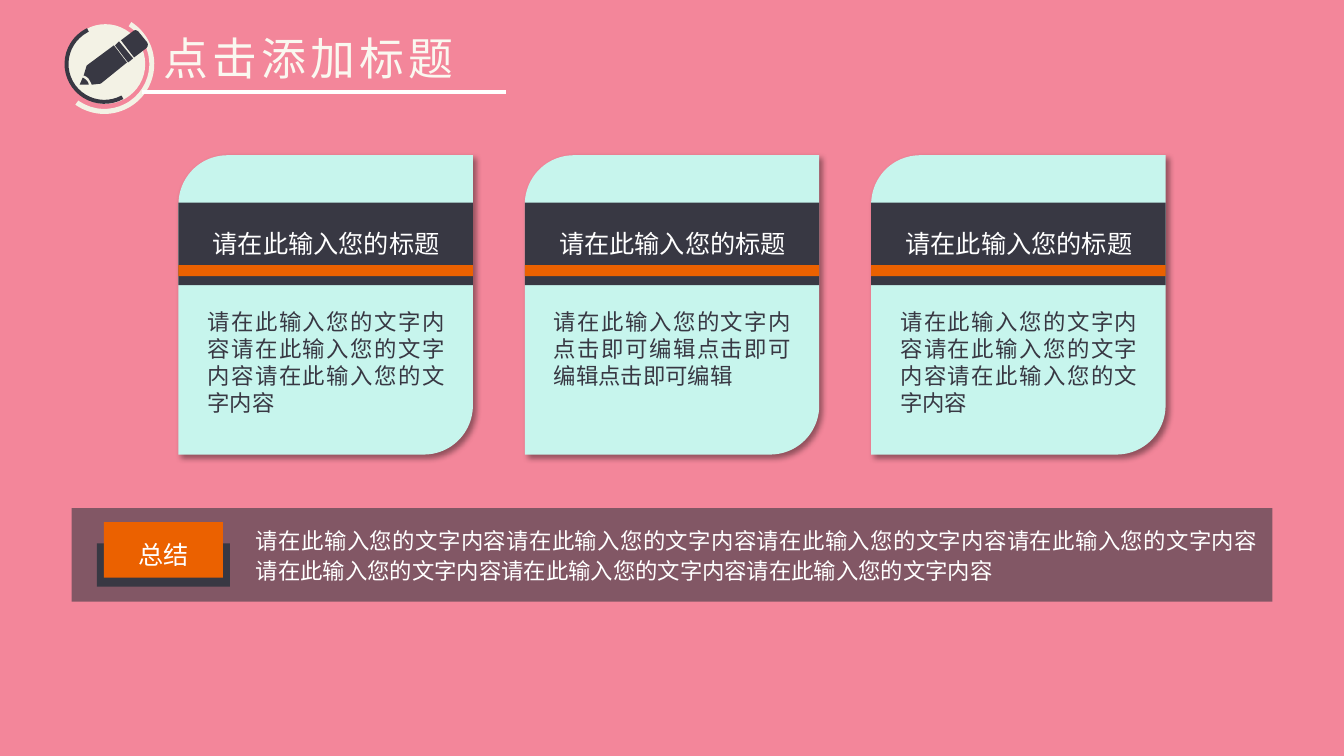
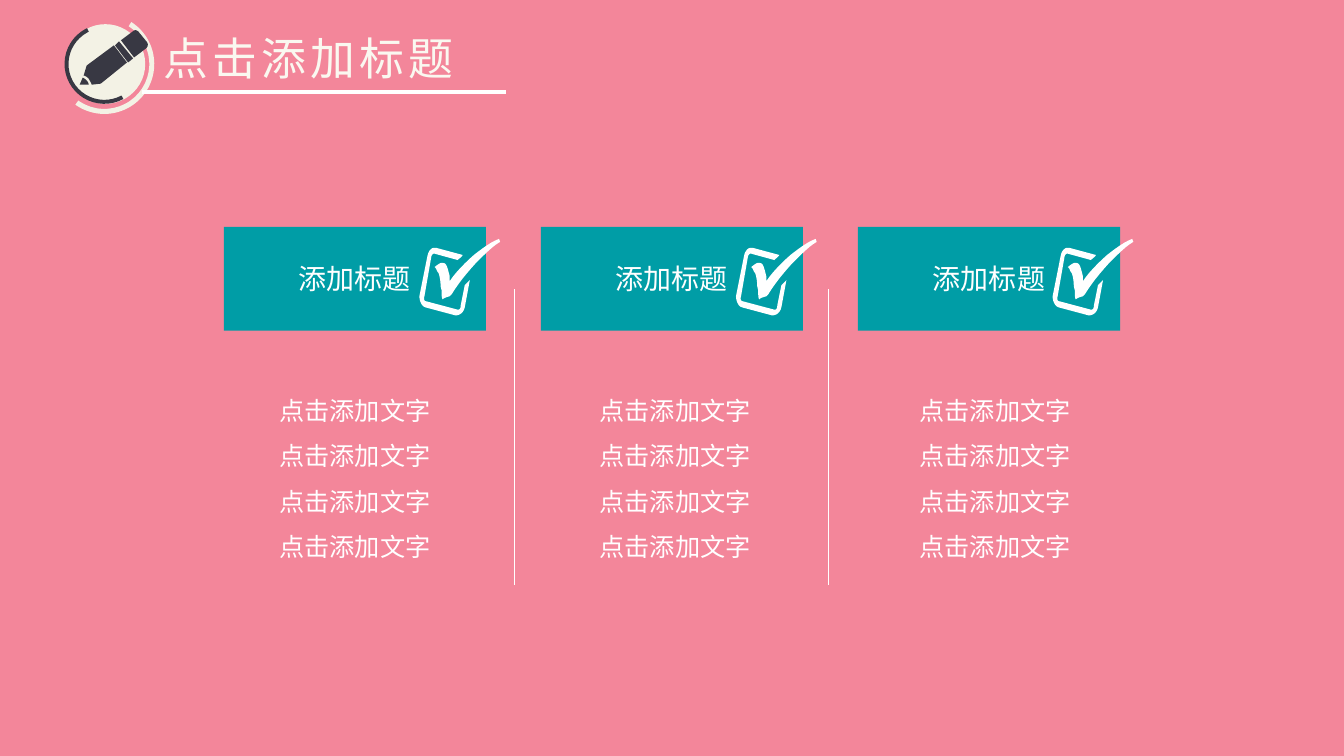
from lxml.etree import SubElement
from pptx import Presentation
from pptx.dml.color import RGBColor
from pptx.enum.shapes import MSO_CONNECTOR, MSO_SHAPE as SHAPE
from pptx.enum.text import MSO_ANCHOR as ANCHOR, MSO_AUTO_SIZE as AUTO, PP_ALIGN as ALIGN
from pptx.oxml.ns import qn
from pptx.util import Inches, Pt

PINK = RGBColor(0xF3, 0x86, 0x9A)
MINT = RGBColor(0xC7, 0xF5, 0xED)
DARK = RGBColor(0x38, 0x38, 0x43)
ORANGE = RGBColor(0xEB, 0x61, 0x00)
TEAL = RGBColor(0x00, 0x9D, 0xA6)
CREAM = RGBColor(0xF3, 0xF2, 0xE5)
IVORY = RGBColor(0xFA, 0xF8, 0xF0)
WHITE = RGBColor(0xFF, 0xFF, 0xFF)
FONT = "Noto Sans CJK SC"

# Outlines in inches: a pair is a straight step, six numbers are a cubic curve.
PENCIL = [
    [(1.35, 0.3), (1.34, 0.3, 1.33, 0.3, 1.32, 0.31), (1.2, 0.4), (1.33, 0.57),
     (1.45, 0.48), (1.47, 0.46, 1.47, 0.44, 1.46, 0.42), (1.37, 0.31)],
    [(1.18, 0.41), (1.14, 0.45), (1.27, 0.62), (1.32, 0.58)],
    [(1.13, 0.45), (0.86, 0.65), (0.83, 0.75), (0.85, 0.75, 0.87, 0.77, 0.88, 0.78),
     (0.89, 0.8, 0.9, 0.81, 0.91, 0.84), (1, 0.83), (1.26, 0.62)],
    [(0.82, 0.77), (0.79, 0.84), (0.88, 0.84), (0.88, 0.83, 0.87, 0.81, 0.86, 0.8),
     (0.85, 0.79, 0.84, 0.78, 0.82, 0.77)],
]
CHECKBOX = [
    [(4.95, 2.37), (4.87, 2.4, 4.79, 2.46, 4.7, 2.53), (4.61, 2.61, 4.52, 2.7, 4.46, 2.79),
     (4.46, 2.74), (4.44, 2.66, 4.43, 2.61, 4.4, 2.61), (4.37, 2.6, 4.35, 2.62, 4.31, 2.65),
     (4.33, 2.66, 4.33, 2.69, 4.35, 2.71), (4.36, 2.74, 4.37, 2.78, 4.37, 2.84),
     (4.38, 2.88), (4.38, 2.92, 4.38, 2.96, 4.39, 2.97), (4.4, 2.96, 4.42, 2.95, 4.46, 2.94),
     (4.48, 2.92), (4.54, 2.82, 4.62, 2.72, 4.72, 2.61), (4.81, 2.52, 4.89, 2.44, 4.96, 2.4)],
    [(4.32, 2.46), (4.29, 2.45, 4.25, 2.48, 4.24, 2.54), (4.16, 2.94),
     (4.16, 2.98, 4.18, 3.04, 4.22, 3.05), (4.52, 3.13), (4.56, 3.13, 4.6, 3.1, 4.61, 3.05),
     (4.66, 2.78), (4.61, 2.83), (4.57, 3.03), (4.57, 3.07, 4.55, 3.08, 4.53, 3.07),
     (4.23, 2.99), (4.21, 2.99, 4.2, 2.97, 4.21, 2.94), (4.28, 2.54),
     (4.29, 2.52, 4.3, 2.51, 4.32, 2.52), (4.54, 2.58), (4.56, 2.56, 4.58, 2.55, 4.59, 2.53),
     (4.33, 2.46)],
]


def flatten(outline, steps=6):
    """Turn an outline with curves into plain points."""
    points = [outline[0]]
    for segment in outline[1:]:
        if len(segment) == 2:
            points.append(segment)
            continue
        controls = (points[-1], segment[:2], segment[2:4], segment[4:])
        for step in range(1, steps + 1):
            t = step / steps
            weights = ((1 - t) ** 3, 3 * t * (1 - t) ** 2, 3 * t * t * (1 - t), t ** 3)
            points.append(tuple(sum(w * c[axis] for w, c in zip(weights, controls))
                                for axis in (0, 1)))
    return points


def spread(first, last, count=3):
    """Evenly spaced positions from first to last."""
    return [first + i * (last - first) / (count - 1) for i in range(count)]


class Deck:
    def __init__(self):
        self.prs = Presentation()
        self.prs.slide_width, self.prs.slide_height = Inches(13.33), Inches(7.5)
        background = self.prs.slide_master.background.fill
        background.solid()
        background.fore_color.rgb = PINK

    def new_slide(self, title):
        self.slide = self.prs.slides.add_slide(self.prs.slide_layouts[6])
        self.shapes = self.slide.shapes
        self.header(title)

    def paint(self, shape, color):
        shape.shadow.inherit = False
        shape.fill.solid()
        shape.fill.fore_color.rgb = color
        shape.line.fill.background()

    def block(self, left, top, width, height, color, kind=SHAPE.RECTANGLE):
        shape = self.shapes.add_shape(kind, Inches(left), Inches(top),
                                      Inches(width), Inches(height))
        self.paint(shape, color)
        return shape

    def arc(self, left, top, size, turn, color):
        ring = self.block(left, top, size, size, color, SHAPE.BLOCK_ARC)
        for i, value in enumerate((108, 1.67, 0.05)):
            ring.adjustments[i] = value
        ring.rotation = turn

    def icon(self, outlines, color, shift=0):
        for outline in outlines:
            points = [(Inches(x + shift), Inches(y)) for x, y in flatten(outline)]
            builder = self.shapes.build_freeform(*points[0])
            builder.add_line_segments(points[1:], close=True)
            self.paint(builder.convert_to_shape(), color)

    def line(self, x1, y1, x2, y2, width):
        rule = self.shapes.add_connector(MSO_CONNECTOR.STRAIGHT, Inches(x1), Inches(y1),
                                         Inches(x2), Inches(y2))
        rule.line.color.rgb = WHITE
        rule.line.width = Pt(width)
        SubElement(rule._element.spPr, qn("a:effectLst"))

    def fill_text(self, frame, lines, size, color, align, font=FONT, leading=None, tracking=0):
        frame.word_wrap = True
        for i, line in enumerate(lines):
            paragraph = frame.paragraphs[0] if i == 0 else frame.add_paragraph()
            paragraph.alignment = align
            paragraph.line_spacing = leading
            run = paragraph.add_run()
            run.text = line
            run.font.size = Pt(size)
            run.font.color.rgb = color
            run.font.name = font
            props = run._r.get_or_add_rPr()
            SubElement(props, qn("a:ea")).set("typeface", font)
            if tracking:
                props.set("spc", str(tracking * 100))

    def text(self, left, top, width, height, lines, size, color=WHITE, align=ALIGN.CENTER,
             anchor=ANCHOR.TOP, **style):
        frame = self.shapes.add_textbox(Inches(left), Inches(top),
                                        Inches(width), Inches(height)).text_frame
        self.fill_text(frame, lines, size, color, align, **style)
        frame.vertical_anchor = anchor
        frame.auto_size = AUTO.SHAPE_TO_FIT_TEXT

    def header(self, title):
        self.text(1.52, 0.26, 3.31, 0.64, [title], 32, IVORY, ALIGN.JUSTIFY, tracking=3)
        self.block(0.65, 0.24, 0.79, 0.79, CREAM, SHAPE.OVAL)
        self.arc(0.64, 0.24, 0.79, 241.5, DARK)
        self.arc(0.54, 0.14, 0.99, 122.7, CREAM)
        self.icon(PENCIL, DARK)
        self.line(1.41, 0.91, 5.02, 0.91, 3)

    def card(self, left, heading, body):
        width = 2.92
        panel = self.block(left, 1.54, width, 2.97, MINT, SHAPE.ROUND_2_DIAG_RECTANGLE)
        self.drop_shadow(panel)
        self.block(left, 2.01, width, 0.82, DARK)
        self.block(left, 2.63, width, 0.11, ORANGE)
        self.text(left + 0.19, 2.22, 2.55, 0.4, [heading], 18)
        self.text(left + 0.19, 3.01, 2.55, 1.18, [body], 16, DARK, ALIGN.JUSTIFY)

    def drop_shadow(self, shape):
        effects = shape._element.spPr.find(qn("a:effectLst"))
        shadow = SubElement(effects, qn("a:outerShdw"), blurRad=str(Pt(4)), dist=str(Pt(3)),
                            dir=str(45 * 60000), algn="tl", rotWithShape="0")
        color = SubElement(shadow, qn("a:srgbClr"), val="000000")
        SubElement(color, qn("a:alpha"), val="40000")

    def summary(self, label, body):
        band = self.block(0.71, 5.04, 11.91, 0.93, DARK)
        color = band._element.spPr.find(qn("a:solidFill")).find(qn("a:srgbClr"))
        SubElement(color, qn("a:alpha"), val="60000")
        self.block(0.96, 5.39, 1.32, 0.43, DARK)
        self.block(1.03, 5.18, 1.18, 0.55, ORANGE)
        self.text(1.1, 5.3, 1.04, 0.4, [label], 18)
        self.text(2.44, 5.14, 10.14, 0.71, [body], 16, align=ALIGN.JUSTIFY, leading=1.14)

    def heading_box(self, left, heading):
        box = self.block(left, 2.25, 2.6, 1.03, TEAL)
        self.fill_text(box.text_frame, [heading], 20, WHITE, ALIGN.CENTER, font="Arial")
        box.text_frame.vertical_anchor = ANCHOR.MIDDLE


def main():
    deck = Deck()
    title = "点击添加标题"
    sentence = "请在此输入您的文字内容"

    deck.new_slide(title)
    bodies = [sentence * 3, "请在此输入您的文字内" + "点击即可编辑" * 3, sentence * 3]
    for left, body in zip(spread(1.77, 8.64), bodies):
        deck.card(left, "请在此输入您的标题", body)
    deck.summary("总结", sentence * 7)

    deck.new_slide(title)
    for x in (5.1, 8.21):
        deck.line(x, 2.87, x, 5.8, 0.25)
    for left in spread(2.22, 8.51):
        deck.heading_box(left, "添加标题")
    for left in spread(2.38, 8.73):
        deck.text(left, 3.71, 2.28, 1.92, ["点击添加文字"] * 4, 18,
                  anchor=ANCHOR.MIDDLE, leading=1.5)
    for shift in spread(0, 6.28):
        deck.icon(CHECKBOX, WHITE, shift)

    deck.prs.save("out.pptx")


if __name__ == "__main__":
    main()
